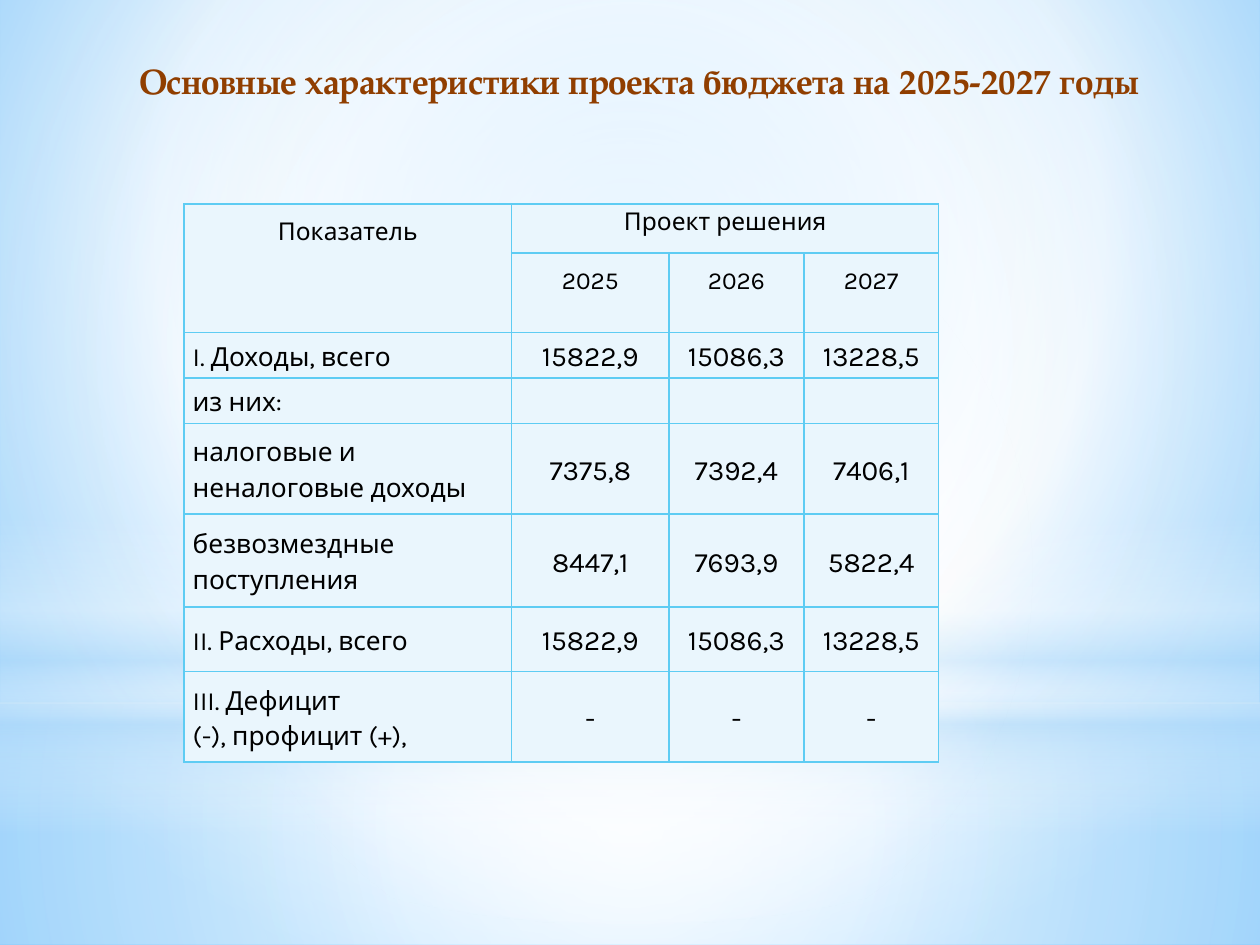
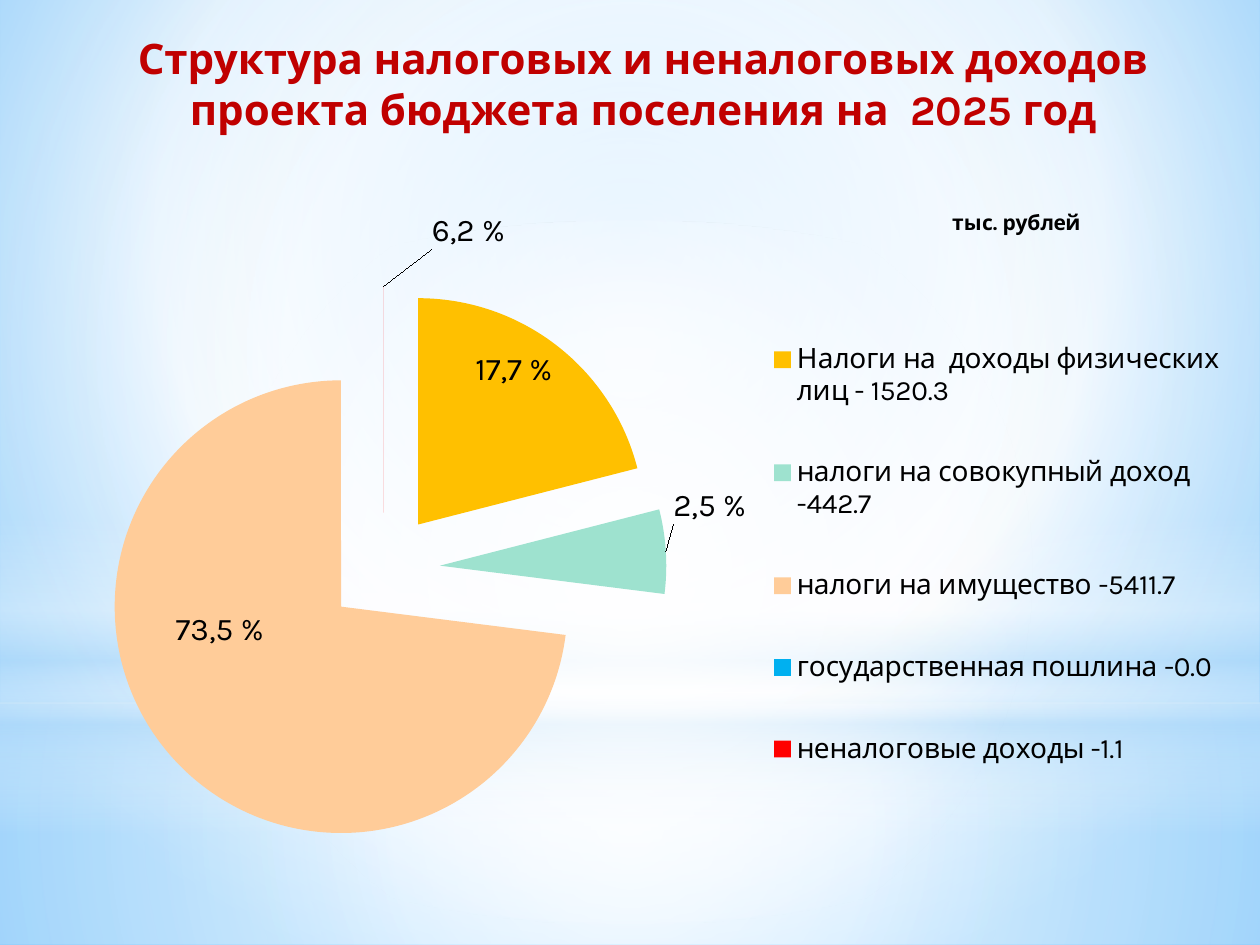
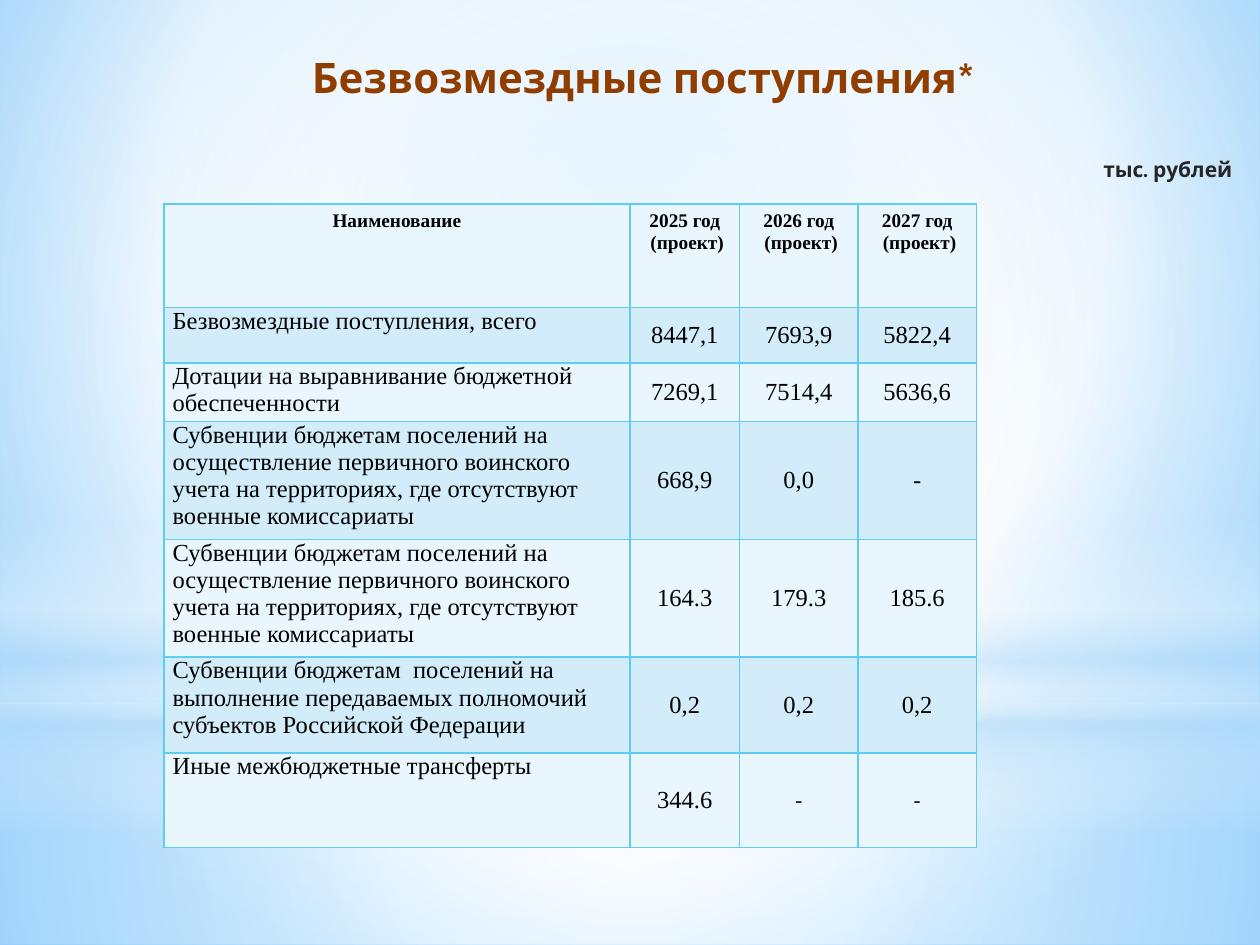
import pptx
import pptx.chart.data
import pptx.dml.color
import pptx.enum.chart
import pptx.enum.shapes
import pptx.enum.text
import pptx.oxml
import pptx.oxml.ns
import pptx.util

Inches = pptx.util.Inches
Pt = pptx.util.Pt
RGBColor = pptx.dml.color.RGBColor
Align = pptx.enum.text.PP_ALIGN
Anchor = pptx.enum.text.MSO_ANCHOR
Shape = pptx.enum.shapes.MSO_SHAPE
LabelPosition = pptx.enum.chart.XL_LABEL_POSITION

WHITE = RGBColor(0xFF, 0xFF, 0xFF)
BLACK = RGBColor(0x00, 0x00, 0x00)
SKY = RGBColor(0x9E, 0xD5, 0xFF)
DEEP_SKY = RGBColor(0x5B, 0xB9, 0xFF)
HAZE = RGBColor(0xB4, 0xDC, 0xFA)
BROWN = RGBColor(0x90, 0x3E, 0x00)
RED = RGBColor(0xC0, 0x00, 0x00)
DARK_GREY = RGBColor(0x26, 0x26, 0x26)
BORDER = RGBColor(0x5E, 0xCC, 0xF3)
PALE_CELL = RGBColor(0xEA, 0xF6, 0xFD)
BLUE_CELL = RGBColor(0xD2, 0xEC, 0xFA)
SLICE_COLOURS = [RGBColor(0xFF, 0xC0, 0x00), RGBColor(0x9E, 0xE2, 0xCF),
                 RGBColor(0xFF, 0xCC, 0x99), RGBColor(0x00, 0xB0, 0xF0),
                 RGBColor(0xFF, 0x00, 0x00)]

BODY_FONT = "Karla"
TITLE_FONT = "TeX Gyre Pagella"
TABLE_FONT = "Times New Roman"
CENTRE_FOCUS = '<a:path path="circle"><a:fillToRect l="50000" t="50000" r="50000" b="50000"/></a:path>'
SKY_FOCUS = '<a:path path="circle"><a:fillToRect l="20000" t="10000" r="20000" b="60000"/></a:path>'
DOWNWARD = '<a:lin ang="5400000" scaled="0"/>'


def paint_gradient(element, stops, direction):
    """Swap the first solid fill for a gradient of (position, colour, opacity) stops."""
    marks = "".join(
        f'<a:gs pos="{position * 1000}"><a:srgbClr val="{colour}">'
        f'<a:alpha val="{opacity * 1000}"/></a:srgbClr></a:gs>'
        for position, colour, opacity in stops)
    gradient = pptx.oxml.parse_xml(
        f'<a:gradFill {pptx.oxml.ns.nsdecls("a")} rotWithShape="1">'
        f'<a:gsLst>{marks}</a:gsLst>{direction}</a:gradFill>')
    solid = element.xpath(".//a:solidFill")[0]
    solid.getparent().replace(solid, gradient)


def write(frame, lines, size, colour=BLACK, font=BODY_FONT, bold=False,
          align=Align.CENTER, spacing=1.0):
    for number, line in enumerate(lines):
        para = frame.paragraphs[0] if number == 0 else frame.add_paragraph()
        para.alignment = align
        para.line_spacing = spacing
        span = para.add_run()
        span.text = line
        span.font.size = Pt(size)
        span.font.name = font
        span.font.bold = bold
        span.font.color.rgb = colour


deck = pptx.Presentation()
deck.slide_width = Inches(10)
deck.slide_height = Inches(7.5)
pages = [deck.slides.add_slide(deck.slide_layouts[6]) for _ in range(3)]

# Shared backdrop, kept on the slide master
master = deck.slide_master
master.background.fill.solid()
paint_gradient(master.element.cSld.find(pptx.oxml.ns.qn("p:bg")),
               [(0, SKY, 100), (60, WHITE, 100), (100, DEEP_SKY, 100)], SKY_FOCUS)
BACKDROP = [
    (Shape.RECTANGLE, 5.58, 1.92,
     [(0, WHITE, 91), (37, WHITE, 76), (100, HAZE, 79)], CENTRE_FOCUS),
    (Shape.RECTANGLE, 0, 5.58,
     [(0, WHITE, 89), (48, WHITE, 62), (100, HAZE, 79)], CENTRE_FOCUS),
    (Shape.RECTANGLE, 4.12, 2.5,
     [(0, WHITE, 0), (29, WHITE, 30), (45, HAZE, 40), (55, WHITE, 26),
      (65, HAZE, 60), (100, WHITE, 0)], DOWNWARD),
    (Shape.OVAL, 1.75, 5.58, [(0, WHITE, 100), (56, WHITE, 0)], CENTRE_FOCUS),
]
for number, (kind, top, height, stops, direction) in enumerate(BACKDROP):
    band = pages[0].shapes.add_shape(kind, 0, Inches(top), deck.slide_width, Inches(height))
    band.shadow.inherit = False
    band.line.fill.background()
    band.fill.solid()
    paint_gradient(band.element, stops, direction)
    band.element.nvSpPr.cNvPr.set("id", str(100 + number))
    master.element.cSld.spTree.insert(2 + number, band.element)

# Titles and the unit note
HEADINGS = [
    (0, 0.13, 1.02, "Основные характеристики проекта бюджета на 2025-2027 годы ",
     20, BROWN, TITLE_FONT, Align.CENTER, Anchor.MIDDLE),
    (1, 0.21, 1.1, "Структура налоговых и неналоговых доходов проекта бюджета поселения на  2025 год",
     24, RED, BODY_FONT, Align.CENTER, Anchor.TOP),
    (2, 0.36, 0.63, "Безвозмездные поступления*",
     24, BROWN, BODY_FONT, Align.CENTER, Anchor.TOP),
    (2, 1.19, 0.32, "тыс. рублей", 12, DARK_GREY, BODY_FONT, Align.RIGHT, Anchor.TOP),
]
for index, top, height, text, size, colour, font, align, anchor in HEADINGS:
    box = pages[index].shapes.add_textbox(Inches(0.33), Inches(top), Inches(9.55), Inches(height))
    box.text_frame.word_wrap = True
    box.text_frame.vertical_anchor = anchor
    write(box.text_frame, [text], size, colour, font, True, align)

# Tables: a cell holds lines separated by "\n"
BUDGET_ROWS = [
    ["Показатель", "Проект решения", "", ""],
    ["", "2025", "2026", "2027"],
    ["I. Доходы, всего", "15822,9", "15086,3", "13228,5"],
    ["из них:", "", "", ""],
    ["налоговые и неналоговые доходы", "7375,8", "7392,4", "7406,1"],
    ["безвозмездные поступления", "8447,1", "7693,9", "5822,4"],
    ["II. Расходы, всего", "15822,9", "15086,3", "13228,5"],
    ["III. Дефицит\n(-), профицит (+),", "-", "-", "-"],
]
MILITARY = ("осуществление первичного воинского учета на территориях, "
            "где отсутствуют военные комиссариаты")
TRANSFER_ROWS = [
    ["Наименование"] + [f"{year} год\n (проект)" for year in (2025, 2026, 2027)],
    ["Безвозмездные поступления, всего", "8447,1", "7693,9", "5822,4"],
    ["Дотации на выравнивание бюджетной обеспеченности", "7269,1", "7514,4", "5636,6"],
    ["Субвенции бюджетам поселений на  " + MILITARY, "668,9", "0,0", "-"],
    ["Субвенции бюджетам поселений на " + MILITARY, "164.3", "179.3", "185.6"],
    ["Субвенции бюджетам  поселений на выполнение передаваемых полномочий "
     "субъектов Российской Федерации", "0,2", "0,2", "0,2"],
    ["Иные межбюджетные трансферты", "344.6", "-", "-"],
]
TABLES = [
    (pages[0], 1.46, [2.6, 1.25, 1.07, 1.07],
     [0.39, 0.63, 0.36, 0.36, 0.72, 0.74, 0.51, 0.72], BUDGET_ROWS),
    (pages[2], 1.3, [3.7, 0.87, 0.94, 0.94],
     [0.82, 0.44, 0.43, 0.86, 0.86, 0.76, 0.75], TRANSFER_ROWS),
]
for page, left, widths, heights, rows in TABLES:
    is_budget = rows is BUDGET_ROWS
    header_rows = 2 if is_budget else 1
    table = page.shapes.add_table(len(rows), len(widths), Inches(left), Inches(1.62),
                                  Inches(sum(widths)), Inches(sum(heights))).table
    for column, width in zip(table.columns, widths):
        column.width = Inches(width)
    for row, height in zip(table.rows, heights):
        row.height = Inches(height)
    if is_budget:
        table.cell(0, 0).merge(table.cell(1, 0))
        table.cell(0, 1).merge(table.cell(0, 3))

    for r, texts in enumerate(rows):
        for c, text in enumerate(texts):
            cell = table.cell(r, c)
            is_header = r < header_rows
            is_label = c == 0 and not is_header
            cell.fill.solid()
            cell.fill.fore_color.rgb = BLUE_CELL if not is_budget and r % 2 else PALE_CELL
            cell.margin_left = cell.margin_right = Inches(0.07)
            cell.margin_top = cell.margin_bottom = Inches(0 if is_budget or not is_header else 0.05)
            top_aligned = is_header or (is_label and not is_budget)
            cell.vertical_anchor = Anchor.TOP if top_aligned else Anchor.MIDDLE
            for position, side in enumerate(("lnL", "lnR", "lnT", "lnB")):
                cell.fill  # borders come ahead of the fill in the cell properties
                cell._tc.get_or_add_tcPr().insert(position, pptx.oxml.parse_xml(
                    f'<a:{side} {pptx.oxml.ns.nsdecls("a")} w="12700"><a:solidFill>'
                    f'<a:srgbClr val="{BORDER}"/></a:solidFill></a:{side}>'))
            if not text:
                continue
            if is_budget:
                size = 14 if is_header else 15 if is_label else 16
                font = BODY_FONT
                spacing = 1.5 if is_header and (r, c) != (0, 1) else 1.15
            else:
                size = 11 if is_header else 12 if r == 6 and text == "-" else 14
                font = TABLE_FONT
                spacing = 1.0
            write(cell.text_frame, text.split("\n"), size, font=font,
                  bold=is_header and not is_budget,
                  align=Align.LEFT if is_label else Align.CENTER, spacing=spacing)

# Pie chart of tax and non-tax revenue
revenue = pptx.chart.data.CategoryChartData()
revenue.categories = ["Налоги на  доходы физических лиц - 1520.3",
                      "налоги на совокупный доход -442.7",
                      "налоги на имущество -5411.7",
                      "государственная пошлина -0.0",
                      "неналоговые доходы -1.1"]
revenue.add_series("тыс. рублей", [21, 6, 73, 0, 0.01])
chart = pages[1].shapes.add_chart(pptx.enum.chart.XL_CHART_TYPE.PIE, Inches(0.2), Inches(1.15),
                                  Inches(9.64), Inches(5.91), revenue).chart
chart.font.size = Pt(18)
chart.font.name = BODY_FONT
chart.font.color.rgb = BLACK
chart.has_title = True
write(chart.chart_title.text_frame, ["тыс. рублей"], 12, bold=True)
chart.has_legend = True
chart.legend.position = pptx.enum.chart.XL_LEGEND_POSITION.RIGHT
chart.legend.include_in_layout = False
chart.legend.font.size = Pt(16)
chart.legend.font.name = BODY_FONT
chart.legend.font.color.rgb = BLACK

series = chart.plots[0].series[0]
series.data_labels.show_value = False
for number, colour in enumerate(SLICE_COLOURS):
    fill = series.points[number].format.fill
    fill.solid()
    fill.fore_color.rgb = colour
first_point = series._element.xpath("c:dPt")[0]
first_point.addprevious(pptx.oxml.parse_xml(
    f'<c:explosion {pptx.oxml.ns.nsdecls("c")} val="25"/>'))

# Slice number, label, anchor on the slice, shift as a share of the chart
LABELS = [
    (0, "17,7 %", LabelPosition.INSIDE_END, 0, 0),
    (1, "2,5 %", LabelPosition.OUTSIDE_END, 0, -0.06),
    (2, "73,5 %", LabelPosition.CENTER, -0.03, -0.07),
    (4, "6,2 %", LabelPosition.OUTSIDE_END, 0.07, -0.04),
]
placements = [
    (chart._chartSpace.xpath("c:chart/c:title")[0], "", {"x": 0.76, "y": 0.08}),
    (chart._chartSpace.xpath("c:chart/c:plotArea")[0], "inner",
     {"x": 0.06, "y": 0.19, "w": 0.47, "h": 0.76}),
    (chart.legend._element, "", {"x": 0.61, "y": 0.2, "w": 0.38, "h": 0.7}),
]
for number, text, position, x, y in LABELS:
    label = series.points[number].data_label
    write(label.text_frame, [text], 18)
    label.position = position
    element = series._element.xpath(f'c:dLbls/c:dLbl[c:idx/@val="{number}"]')[0]
    placements.append((element, "shift", {"x": x, "y": y}))

for element, mode, shares in placements:
    target = '<c:layoutTarget val="inner"/>' if mode == "inner" else ""
    edges = "" if mode == "shift" else '<c:xMode val="edge"/><c:yMode val="edge"/>'
    values = "".join(f'<c:{name} val="{share}"/>' for name, share in shares.items())
    layout = pptx.oxml.parse_xml(
        f'<c:layout {pptx.oxml.ns.nsdecls("c")}><c:manualLayout>{target}{edges}{values}'
        f'</c:manualLayout></c:layout>')
    for earlier in element.xpath("c:layout"):
        element.remove(earlier)
    # The layout follows the title text, the legend position or the label index
    element.insert(0 if mode == "inner" else 1, layout)

deck.save("out.pptx")
